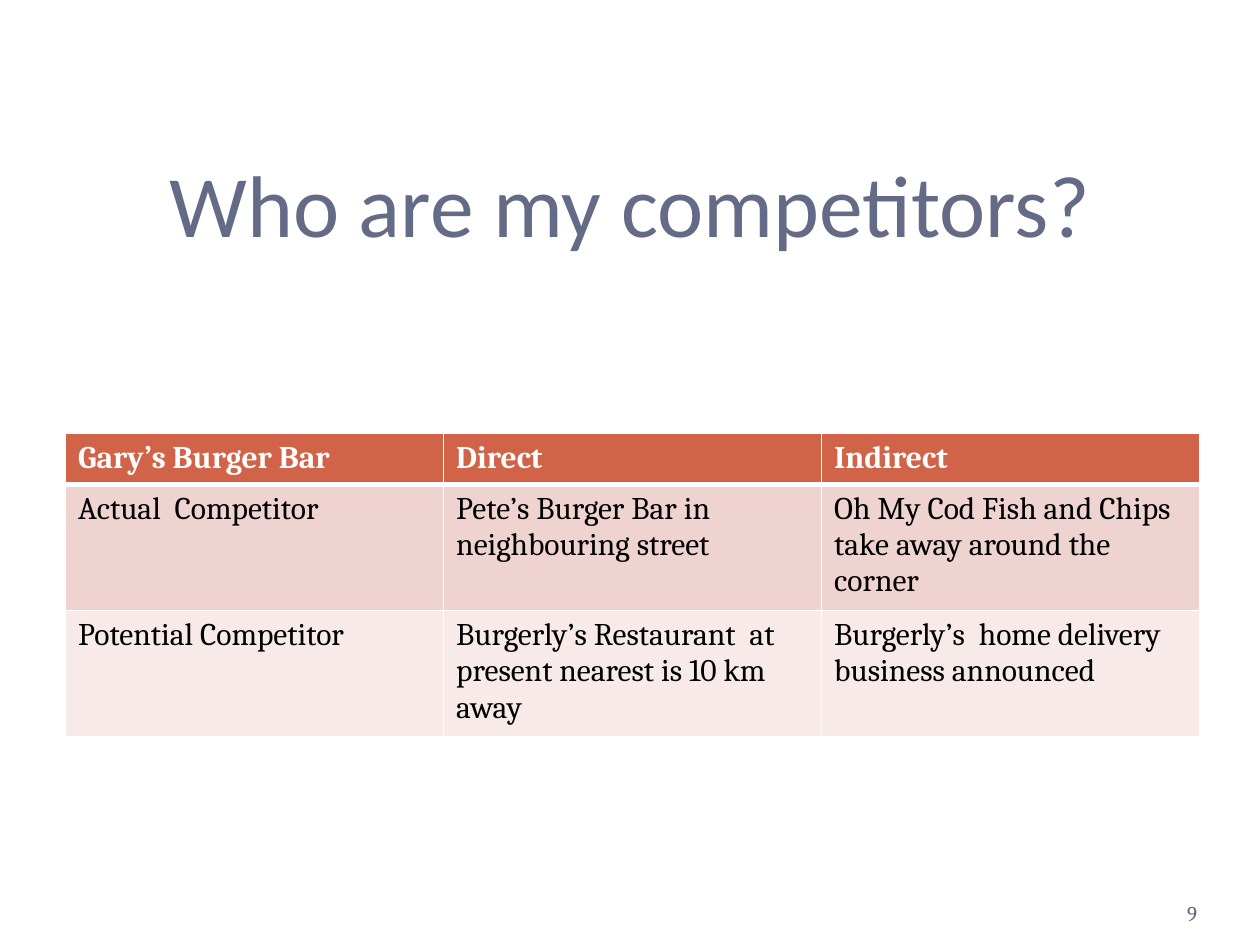
from lxml.etree import SubElement as Sub
from pptx import Presentation
from pptx.dml.color import RGBColor as RGB
from pptx.enum.text import MSO_ANCHOR as ANCHOR, PP_ALIGN as ALIGN
from pptx.oxml.ns import qn
from pptx.util import Pt

COLORS = {
    "title": "646B86", "number": "606680", "white": "FFFFFF", "black": "000000",
    "header": "D16349", "band1": "EED3D0", "band2": "F7EAE9",
}
ROWS = [
    ("Gary’s Burger Bar", "Direct", "Indirect"),
    ("Actual  Competitor", "Pete’s Burger Bar in neighbouring street",
     "Oh My Cod Fish and Chips take away around the corner"),
    ("Potential Competitor", "Burgerly’s Restaurant  at present nearest is 10 km away",
     "Burgerly’s  home delivery business announced"),
]
ROW_STYLES = [
    {"height": 29.2, "fill": "header", "color": "white", "bold": True, "bottom": 3},
    {"height": 69.2, "fill": "band1", "color": "black", "bold": False, "bottom": 1},
    {"height": 69.2, "fill": "band2", "color": "black", "bold": False, "bottom": 1},
]


class Deck:
    """Holds the slide style and draws each kind of element."""

    def __init__(self, prs):
        self.s = prs.slides.add_slide(prs.slide_layouts[6])

    def run(self, p, text, color, **font):
        r = p.add_run()
        r.text = text
        r.font.color.rgb = RGB.from_string(COLORS[color])
        for name, value in font.items():
            setattr(r.font, name, value)

    def text(self, box, text, color, align, top=0, **font):
        tf = self.s.shapes.add_textbox(*map(Pt, box)).text_frame
        frame = {"word_wrap": True, "vertical_anchor": ANCHOR.BOTTOM, "margin_left": 0,
                 "margin_right": 0, "margin_top": Pt(top), "margin_bottom": 0}
        for name, value in frame.items():
            setattr(tf, name, value)
        p = tf.paragraphs[0]
        p.alignment = align
        self.run(p, text, color, **font)

    def borders(self, cell, widths):
        tcPr = cell._tc.get_or_add_tcPr()
        for i, (side, width) in enumerate(widths.items()):
            ln = tcPr.makeelement(qn(f"a:ln{side}"), {"w": str(Pt(width))})
            fill = Sub(ln, qn("a:solidFill"))
            Sub(fill, qn("a:srgbClr"), val=COLORS["white"])
            tcPr.insert(i, ln)

    def table(self, box, rows, styles):
        size = len(rows), len(rows[0])
        table = self.s.shapes.add_table(*size, *map(Pt, box)).table
        top = 1
        for i, (texts, style) in enumerate(zip(rows, styles)):
            table.rows[i].height = Pt(style["height"])
            widths = {"L": 1, "R": 1, "T": top, "B": style["bottom"]}
            for cell, text in zip(table.rows[i].cells, texts):
                cell.fill.solid()
                cell.fill.fore_color.rgb = RGB.from_string(COLORS[style["fill"]])
                self.borders(cell, widths)
                self.run(cell.text_frame.paragraphs[0], text, style["color"],
                         name="Cambria", size=Pt(18), bold=style["bold"])
            top = style["bottom"]


def main():
    prs = Presentation()
    prs.slide_width, prs.slide_height = Pt(720), Pt(540)
    deck = Deck(prs)
    deck.text((36, 55.5, 648, 90), "Who are my competitors?", "title", ALIGN.CENTER,
              top=3.6, name="Calibri", size=Pt(50))
    deck.table((37.5, 247.7, 648, 167.6), ROWS, ROW_STYLES)
    deck.text((624, 500.4, 60, 28.8), "9", "number", ALIGN.RIGHT,
              name="Cambria", size=Pt(12))
    prs.save("out.pptx")


if __name__ == "__main__":
    main()
